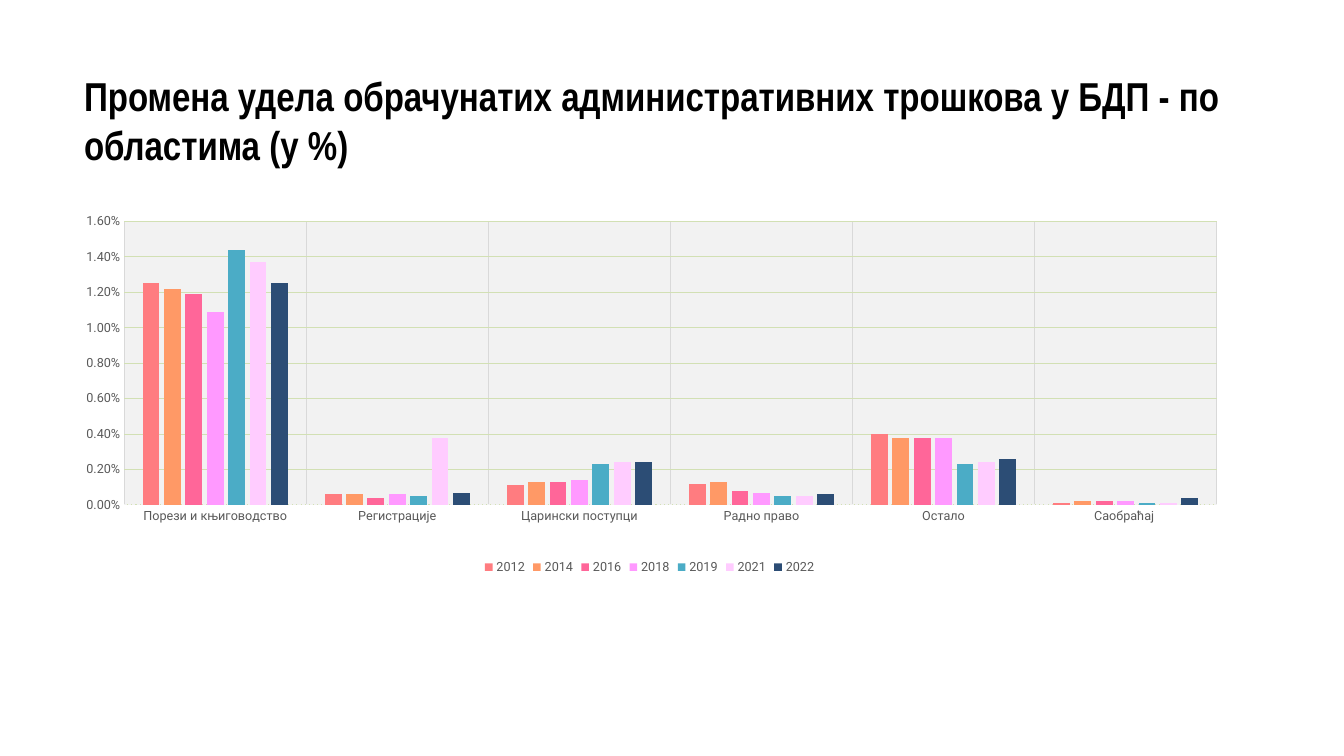
from dataclasses import dataclass

import pptx
import pptx.chart.data
import pptx.dml.color
import pptx.enum.chart
import pptx.enum.dml
import pptx.enum.text
import pptx.oxml
import pptx.oxml.ns
import pptx.util

Pt = pptx.util.Pt


@dataclass(frozen=True)
class YearSeries:
    year: str
    shares: tuple[float, ...]
    color: str


AREAS = (
    "Порези и књиговодство",
    "Регистрације",
    "Царински поступци",
    "Радно право",
    "Остало",
    "Саобраћај ",
)
YEARS = (
    YearSeries("2012", (0.0125, 0.0006, 0.0011, 0.0012, 0.004, 0.0001), "FF7C80"),
    YearSeries("2014", (0.0122, 0.0006, 0.0013, 0.0013, 0.0038, 0.0002), "FF9966"),
    YearSeries("2016", (0.0119, 0.0004, 0.0013, 0.0008, 0.0038, 0.0002), "FF6699"),
    YearSeries("2018", (0.0109, 0.0006, 0.0014, 0.0007, 0.0038, 0.0002), "FF99FF"),
    YearSeries("2019", (0.0144, 0.0005, 0.0023, 0.0005, 0.0023, 0.0001), "4BACC6"),
    YearSeries("2021", (0.0137, 0.0038, 0.0024, 0.0005, 0.0024, 0.0001), "FFCCFF"),
    YearSeries("2022", (0.0125, 0.0007, 0.0024, 0.0006, 0.0026, 0.0004), "2C4D75"),
)
PLOT_FRACTIONS = {"x": 0.06, "y": 0.11, "w": 0.915, "h": 0.707}


def rgb(color: str) -> pptx.dml.color.RGBColor:
    return pptx.dml.color.RGBColor.from_string(color)


def format_font(font, *, name: str, size: float, color: str, bold: bool = False) -> None:
    font.name = name
    font.size = Pt(size)
    font.bold = bold
    font.color.rgb = rgb(color)


def write_text(box, text: str, **font_format) -> None:
    frame = box.text_frame
    frame.word_wrap = True
    frame.auto_size = pptx.enum.text.MSO_AUTO_SIZE.NONE
    frame.vertical_anchor = pptx.enum.text.MSO_ANCHOR.MIDDLE
    frame.margin_left = frame.margin_right = frame.margin_top = frame.margin_bottom = 0
    para = frame.paragraphs[0]
    para.alignment = pptx.enum.text.PP_ALIGN.LEFT
    span = para.add_run()
    span.text = text
    format_font(span.font, **font_format)


def place_title(page) -> None:
    title = page.shapes.title
    title.left, title.top, title.width, title.height = Pt(60), Pt(52), Pt(860), Pt(67)
    write_text(
        title,
        "Промена удела обрачунатих административних трошкова у БДП - по областима (у %)",
        name="Arial Narrow", size=28.8, color="000000", bold=True,
    )


def format_axis(axis, grid_color: str) -> None:
    axis.major_tick_mark = axis.minor_tick_mark = pptx.enum.chart.XL_TICK_MARK.NONE
    axis.has_major_gridlines = True
    grid = axis.major_gridlines.format.line
    grid.color.rgb = rgb(grid_color)
    grid.width = Pt(0.75)
    format_font(axis.tick_labels.font, name="Roboto", size=9, color="595959")


def format_plot_area(chart, fill: str) -> None:
    area = chart.element.find(".//" + pptx.oxml.ns.qn("c:plotArea"))
    for layout in area.findall(pptx.oxml.ns.qn("c:layout")):
        area.remove(layout)
    modes = "".join(f'<c:{side}Mode val="edge"/>' for side in "xy")
    sizes = "".join(f'<c:{key} val="{part}"/>' for key, part in PLOT_FRACTIONS.items())
    names = pptx.oxml.ns.nsdecls("c", "a")
    area.insert(0, pptx.oxml.parse_xml(
        f'<c:layout {names}><c:manualLayout><c:layoutTarget val="inner"/>'
        f"{modes}{sizes}</c:manualLayout></c:layout>"
    ))
    area.append(pptx.oxml.parse_xml(
        f'<c:spPr {names}><a:solidFill><a:srgbClr val="{fill}"/></a:solidFill>'
        "<a:ln><a:noFill/></a:ln></c:spPr>"
    ))


def add_share_chart(page) -> None:
    chart_data = pptx.chart.data.CategoryChartData(number_format="0.00%")
    chart_data.categories = AREAS
    for entry in YEARS:
        chart_data.add_series(entry.year, entry.shares)
    chart = page.shapes.add_chart(
        pptx.enum.chart.XL_CHART_TYPE.COLUMN_CLUSTERED,
        Pt(37.5), Pt(126.7), Pt(853), Pt(286.5), chart_data,
    ).chart
    chart.has_title = False
    format_font(chart.font, name="Roboto", size=10, color="000000")

    plot = chart.plots[0]
    plot.gap_width = 219
    plot.overlap = -27
    plot.vary_by_categories = False
    for series, entry in zip(plot.series, YEARS):
        series.invert_if_negative = False
        series.format.fill.solid()
        series.format.fill.fore_color.rgb = rgb(entry.color)

    format_axis(chart.category_axis, "D9D9D9")
    baseline = chart.category_axis.format.line
    baseline.color.rgb = rgb("F2F2F2")
    baseline.width = Pt(0.75)
    baseline.dash_style = pptx.enum.dml.MSO_LINE.SQUARE_DOT

    share_axis = chart.value_axis
    format_axis(share_axis, "D2E0B4")
    share_axis.format.line.fill.background()
    share_axis.minimum_scale = 0
    share_axis.maximum_scale = 0.016
    share_axis.major_unit = 0.002
    share_axis.tick_labels.number_format = "0.00%"
    share_axis.tick_labels.number_format_is_linked = False

    chart.has_legend = True
    chart.legend.position = pptx.enum.chart.XL_LEGEND_POSITION.BOTTOM
    chart.legend.include_in_layout = False
    format_font(chart.legend.font, name="Roboto", size=9, color="595959")
    format_plot_area(chart, "F2F2F2")


def main() -> None:
    deck = pptx.Presentation()
    deck.slide_width, deck.slide_height = Pt(960), Pt(540)
    page = deck.slides.add_slide(deck.slide_layouts.get_by_name("Title Only"))
    place_title(page)
    add_share_chart(page)
    deck.save("out.pptx")


if __name__ == "__main__":
    main()
